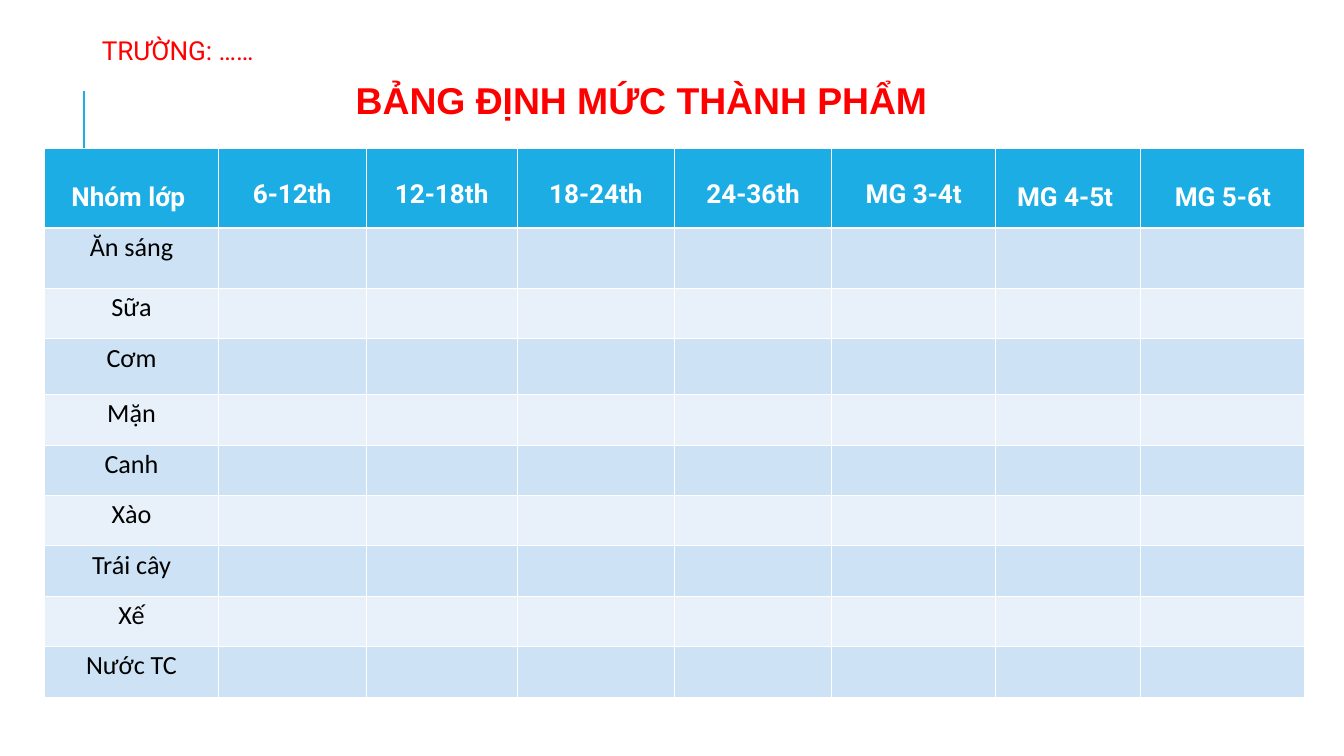
from lxml import etree
from pptx import Presentation
from pptx.dml.color import RGBColor
from pptx.enum.shapes import MSO_CONNECTOR
from pptx.enum.text import MSO_AUTO_SIZE, PP_ALIGN
from pptx.oxml.ns import qn
from pptx.util import Pt

STRAIGHT = MSO_CONNECTOR.STRAIGHT
CENTER, JUSTIFY = PP_ALIGN.CENTER, PP_ALIGN.JUSTIFY
GROW = MSO_AUTO_SIZE.SHAPE_TO_FIT_TEXT

BLUE, RED, WHITE, BLACK = "1CADE4", "FF0000", "FFFFFF", "000000"
BANDS = ["CDE3F5", "E8F1FA"]

# Content: text, font, size, bold, first-line indent
HEADINGS = [
    ("TRƯỜNG: ……", "Roboto", 28, False, 54),
    ("BẢNG ĐỊNH MỨC THÀNH PHẨM", "Arial", 40, True, 326),
]
GROUPS = ["Nhóm lớp ", "6-12th", "12-18th", "18-24th", "24-36th",
          "MG 3-4t", "MG 4-5t ", "MG 5-6t"]
UNPADDED = range(1, 6)
MEALS = ["Ăn sáng", "Sữa", "Cơm", "Mặn", "Canh", "Xào", "Trái cây", "Xế", "Nước TC"]
COLUMN_WIDTHS = [185.8, 158.4, 162, 168.5, 168.5, 175.7, 155.5, 175.7]
ROW_HEIGHTS = [85, 64.8, 54, 59.8] + [54] * 6


def color(value):
    return RGBColor.from_string(value)


def set_font(para, name, size, value, bold=False):
    font = para.font
    font.name, font.size, font.bold = name, Pt(size), bold
    font.color.rgb = color(value)


def set_border(cell, side, width):
    line = etree.SubElement(cell._tc.get_or_add_tcPr(), qn(f"a:ln{side}"), w=str(Pt(width)))
    fill = etree.SubElement(line, qn("a:solidFill"))
    etree.SubElement(fill, qn("a:srgbClr"), val=WHITE)


def style_cell(cell, row, fill):
    # Borders precede the fill in the cell properties
    for side in "LRTB":
        heavy = (row, side) in [(0, "B"), (1, "T")]
        set_border(cell, side, 3 if heavy else 1)
    cell.fill.solid()
    cell.fill.fore_color.rgb = color(fill)


def main():
    deck = Presentation()
    deck.slide_width, deck.slide_height = Pt(1440), Pt(810)
    page = deck.slides.add_slide(deck.slide_layouts[6])

    # Accent line
    accent = page.shapes.add_connector(STRAIGHT, Pt(90), Pt(206), Pt(90), Pt(98))
    accent.line.color.rgb = color(BLUE)
    accent.line.width = Pt(1.5)
    etree.SubElement(accent._element.spPr, qn("a:effectLst"))

    # School name and title
    box = page.shapes.add_textbox(Pt(48), Pt(33), Pt(1320), Pt(101.5))
    frame = box.text_frame
    frame.word_wrap = True
    frame.auto_size = GROW
    for i, (text, name, size, bold, indent) in enumerate(HEADINGS):
        para = frame.add_paragraph() if i else frame.paragraphs[0]
        para.text = text
        para.alignment = JUSTIFY
        para.space_before = para.space_after = Pt(6)
        para._p.get_or_add_pPr().set("indent", str(Pt(indent)))
        set_font(para, name, size, RED, bold)

    # Table grid
    table = page.shapes.add_table(
        len(ROW_HEIGHTS), len(COLUMN_WIDTHS), Pt(48), Pt(159.3),
        Pt(sum(COLUMN_WIDTHS)), Pt(sum(ROW_HEIGHTS))).table
    for column, width in zip(table.columns, COLUMN_WIDTHS):
        column.width = Pt(width)
    for row, height in zip(table.rows, ROW_HEIGHTS):
        row.height = Pt(height)
    for r in range(len(ROW_HEIGHTS)):
        for c in range(len(COLUMN_WIDTHS)):
            style_cell(table.cell(r, c), r, BANDS[(r - 1) % 2] if r else BLUE)

    # Header row
    for c, group in enumerate(GROUPS):
        cell = table.cell(0, c)
        if c in UNPADDED:
            cell.margin_left = cell.margin_right = cell.margin_top = cell.margin_bottom = 0
        para = cell.text_frame.paragraphs[0]
        para.text = group
        para.alignment = CENTER
        para.line_spacing = 2.0
        set_font(para, "Roboto", 28, WHITE, True)

    # Meal names
    for r, meal in enumerate(MEALS, 1):
        para = table.cell(r, 0).text_frame.paragraphs[0]
        para.text = meal
        para.alignment = CENTER
        set_font(para, "Calibri", 28, BLACK)

    deck.save("out.pptx")


if __name__ == "__main__":
    main()
